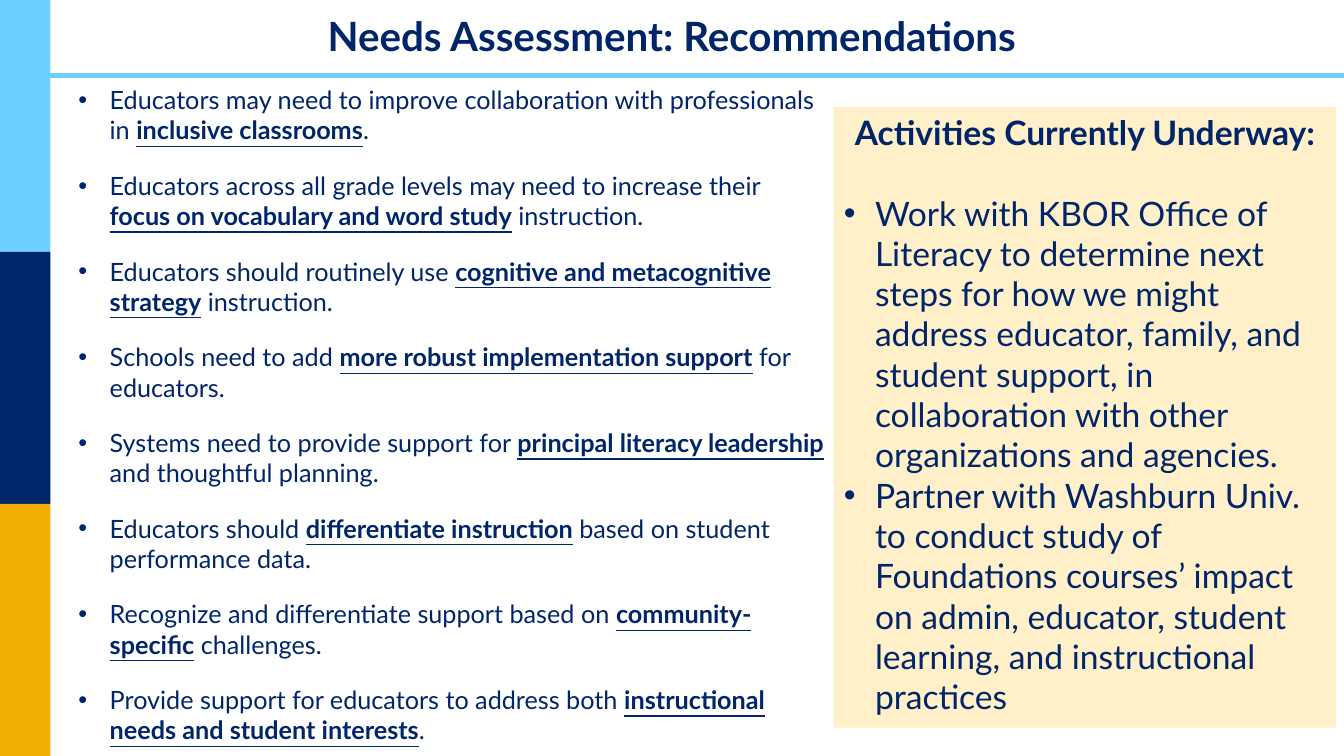
from dataclasses import dataclass
from typing import Any

from lxml.etree import SubElement as Sub
from pptx import Presentation
from pptx.dml.color import RGBColor as RGB
from pptx.enum.shapes import MSO_CONNECTOR as Link, MSO_SHAPE as Form
from pptx.enum.text import MSO_ANCHOR as Anchor, MSO_AUTO_SIZE as Fit, PP_ALIGN as Align
from pptx.oxml.ns import qn
from pptx.util import Inches, Pt

SKY = RGB(0x6E, 0xD0, 0xFF)
NAVY = RGB(0x00, 0x25, 0x69)
GOLD = RGB(0xF1, 0xAD, 0x02)
CREAM = RGB(0xFF, 0xF0, 0xCA)
WIDE, HIGH = Inches(13.33), Inches(7.5)
INDENT = Inches(0.31)
FRAME = {"word_wrap": True, "auto_size": Fit.NONE, "vertical_anchor": Anchor.TOP}


@dataclass
class Area:
    """A box in percent of the slide's width and height."""
    x: float
    y: float
    w: float
    h: float

    def box(self) -> tuple[int, int, int, int]:
        return (int(WIDE * self.x / 100), int(HIGH * self.y / 100),
                int(WIDE * self.w / 100), int(HIGH * self.h / 100))


@dataclass
class Advice:
    lead: str
    key: str
    tail: str


TITLE = Area(20.48, 0.13, 59.04, 10)
LIST = Area(5.1, 10.53, 56.94, 89.47)
PANEL = Area(62.04, 14.13, 37.36, 82.13)
BAR = 3.75
RULE = Area(3.23, 10, 96.77, 0)

ADVICE = [
    Advice("Educators may need to improve collaboration with professionals in ",
           "inclusive classrooms", "."),
    Advice("Educators across all grade levels may need to increase their ",
           "focus on vocabulary and word study", " instruction."),
    Advice("Educators should routinely use ",
           "cognitive and metacognitive strategy", " instruction."),
    Advice("Schools need to add ", "more robust implementation support", " for educators."),
    Advice("Systems need to provide support for ",
           "principal literacy leadership", " and thoughtful planning."),
    Advice("Educators should ", "differentiate instruction",
           " based on student performance data."),
    Advice("Recognize and differentiate support based on ",
           "community-specific", " challenges."),
    Advice("Provide support for educators to address both ",
           "instructional needs and student interests", "."),
]
TASKS = [
    "Work with KBOR Office of Literacy to determine next steps for how we might address "
    "educator, family, and student support, in collaboration with other organizations "
    "and agencies.",
    "Partner with Washburn Univ. to conduct study of Foundations courses’ impact on admin, "
    "educator, student learning, and instructional practices",
]


def style(item: Any, form: dict[str, Any]) -> None:
    for name, value in form.items():
        setattr(item, name, value)


def write(para: Any, text: str, size: float, **form: Any) -> None:
    run = para.add_run()
    run.text = text
    style(run.font, {"name": "Lato", "size": Pt(size), "bold": False, **form})
    run.font.color.rgb = NAVY


def line(frame: Any, first: bool, **form: Any) -> Any:
    para = frame.paragraphs[0] if first else frame.add_paragraph()
    style(para, form)
    return para


def bullet(para: Any) -> None:
    props = para._p.get_or_add_pPr()
    props.set("marL", str(INDENT))
    props.set("indent", str(-INDENT))
    Sub(props, qn("a:buFont"), typeface="Arial")
    Sub(props, qn("a:buChar"), char="•")


def block(slide: Any, area: Area, color: RGB) -> Any:
    shape = slide.shapes.add_shape(Form.RECTANGLE, *area.box())
    shape.shadow.inherit = False
    shape.fill.solid()
    shape.fill.fore_color.rgb = color
    shape.line.fill.background()
    return shape


def main() -> None:
    deck = Presentation()
    style(deck, {"slide_width": WIDE, "slide_height": HIGH})
    slide = deck.slides.add_slide(deck.slide_layouts[5])

    # Colour bars on the left
    for row, color in enumerate((SKY, NAVY, GOLD)):
        block(slide, Area(0, row * 100 / 3, BAR, 100 / 3), color)

    # Title and the rule below it
    title = slide.shapes.title
    style(title, dict(zip(("left", "top", "width", "height"), TITLE.box())))
    style(title.text_frame, {**FRAME, "vertical_anchor": Anchor.MIDDLE})
    para = line(title.text_frame, True, alignment=Align.CENTER, line_spacing=0.9)
    write(para, "Needs Assessment: Recommendations", 28.8, bold=True)
    x, y, w, _ = RULE.box()
    rule = slide.shapes.add_connector(Link.STRAIGHT, x, y, x + w, y)
    rule.line.color.rgb = SKY
    rule.line.width = Pt(3)
    Sub(rule._element.spPr, qn("a:effectLst"))

    # Recommendations
    frame = slide.shapes.add_textbox(*LIST.box()).text_frame
    style(frame, FRAME)
    for i, tip in enumerate(ADVICE):
        para = line(frame, i == 0, space_before=Pt(18 if i else 0))
        bullet(para)
        write(para, tip.lead, 18)
        write(para, tip.key, 18, bold=True, underline=True)
        write(para, tip.tail, 18)

    # Activities panel
    frame = block(slide, PANEL, CREAM).text_frame
    style(frame, FRAME)
    para = line(frame, True, alignment=Align.CENTER)
    write(para, "Activities Currently Underway:", 24, bold=True)
    for i, task in enumerate(TASKS):
        para = line(frame, False, alignment=Align.LEFT, space_before=Pt(0 if i else 28.8))
        bullet(para)
        write(para, task, 24)

    deck.save("out.pptx")


if __name__ == "__main__":
    main()
